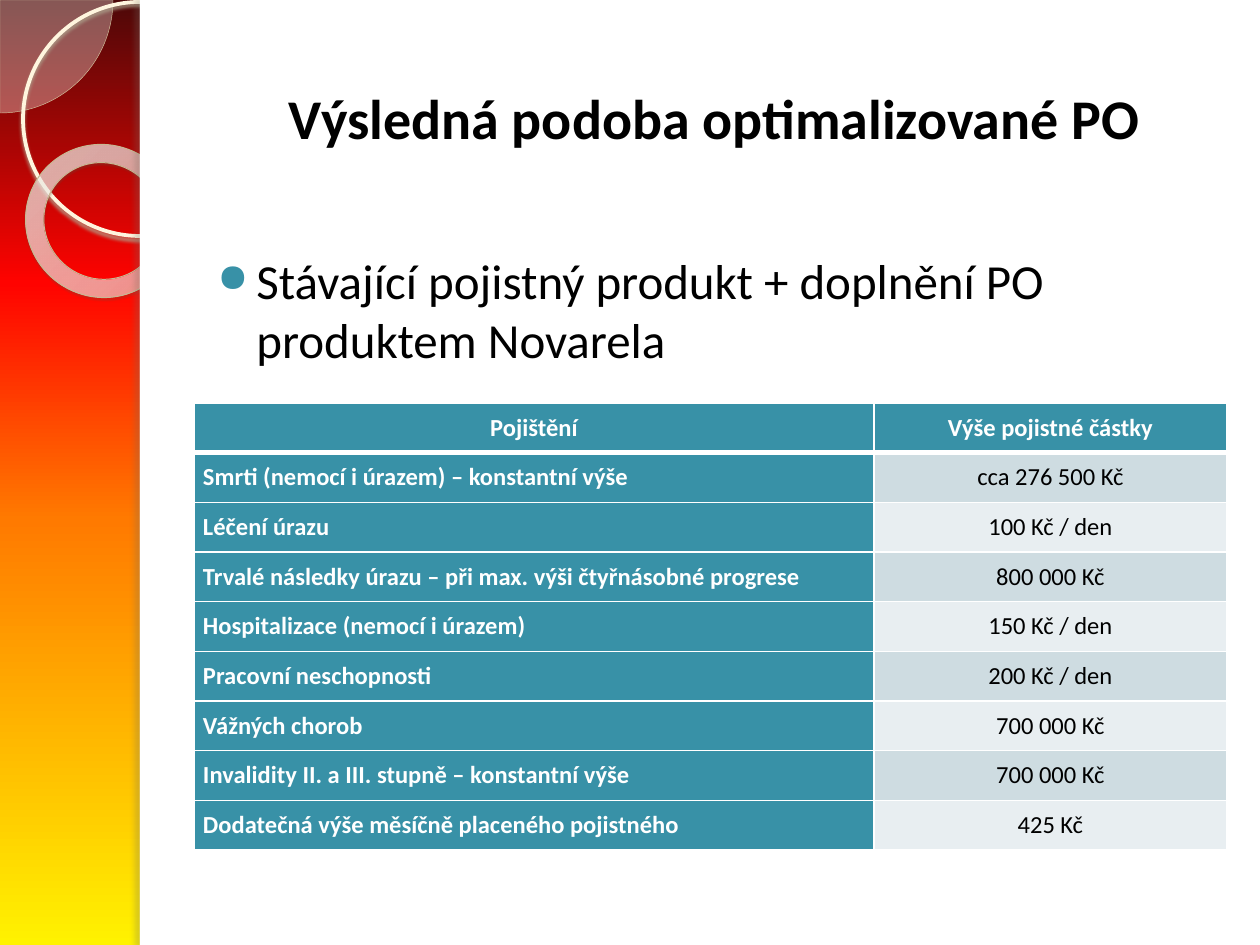
import pptx
import pptx.dml.color
import pptx.enum.shapes
import pptx.enum.text
import pptx.oxml
import pptx.oxml.ns
import pptx.util

SCALE = 914400 / 126
FONT = "Calibri"
COLORS = {
    "black": "000000", "white": "FFFFFF", "teal": "3891A7",
    "band_dark": "CEDCE1", "band_light": "E8EEF1",
    "cream": "FEFAF4", "sand": "D3C39F", "ring": "FFF5DE",
    "ring_shadow": "B0A68F", "donut_line": "C7B893",
    "donut_shadow": "5A5444", "edge_shadow": "736F63",
}
BACKGROUND_STOPS = [(0, "FFF200", 100), (45, "FF7A00", 100),
                    (70, "FF0300", 100), (100, "4D0808", 100)]
DONUT_STOPS = [(0, "FFFCF6", 70), (70, "FFFEFB", 55), (100, "F0D28E", 60)]
HEADER = ("Pojištění", "Výše pojistné částky")
COVERAGE = [
    ("Smrti (nemocí i úrazem) – konstantní výše", "cca 276 500 Kč"),
    ("Léčení úrazu", "100 Kč / den"),
    ("Trvalé následky úrazu – při max. výši čtyřnásobné progrese", "800 000 Kč"),
    ("Hospitalizace (nemocí i úrazem)", "150 Kč / den"),
    ("Pracovní neschopnosti", "200 Kč / den"),
    ("Vážných chorob", "700 000 Kč"),
    ("Invalidity II. a III. stupně – konstantní výše", "700 000 Kč"),
    ("Dodatečná výše měsíčně placeného pojistného", "425 Kč"),
]
SHAPE = pptx.enum.shapes.MSO_SHAPE
ALIGN = pptx.enum.text.PP_ALIGN
MIDDLE = pptx.enum.text.MSO_ANCHOR.MIDDLE


def px(length):
    return pptx.util.Emu(round(length * SCALE))


def rgb(name):
    return pptx.dml.color.RGBColor.from_string(COLORS[name])


def element(markup):
    """Parse one drawing element, adding the namespace to its first tag."""
    tag, rest = markup.split(" ", 1)
    return pptx.oxml.parse_xml(f"{tag} {pptx.oxml.ns.nsdecls('a')} {rest}")


def set_gradient(owner, stops, direction):
    """Replace the gradient found inside an element with the given stops."""
    gradient = next(owner.iter(pptx.oxml.ns.qn("a:gradFill")))
    marks = "".join(
        f'<a:gs pos="{position * 1000}"><a:srgbClr val="{color}">'
        f'<a:alpha val="{alpha * 1000}"/></a:srgbClr></a:gs>'
        for position, color, alpha in stops)
    gradient.getparent().replace(gradient, element(
        f'<a:gradFill rotWithShape="1"><a:gsLst>{marks}</a:gsLst>{direction}</a:gradFill>'))


def write_text(frame, text, size=14, color="black", bold=False, align=ALIGN.LEFT):
    paragraph = frame.paragraphs[0]
    paragraph.alignment = align
    run = paragraph.add_run()
    run.text = text
    run.font.name = FONT
    run.font.size = pptx.util.Pt(size)
    run.font.bold = bold
    run.font.color.rgb = rgb(color)
    return paragraph


class SlideBuilder:
    def __init__(self, slide):
        self.slide = slide

    def background(self, stops):
        self.slide.background.fill.gradient()
        set_gradient(self.slide.element, stops, '<a:lin ang="16200000" scaled="0"/>')

    def shape(self, kind, box, fill=None, alpha=100, line=None, shadow=None,
              adjustments=()):
        shape = self.slide.shapes.add_shape(kind, *map(px, box))
        for index, value in enumerate(adjustments):
            shape.adjustments[index] = value
        if fill:
            shape.fill.solid()
            shape.fill.fore_color.rgb = rgb(fill)
            color = next(shape.element.spPr.iter(pptx.oxml.ns.qn("a:srgbClr")))
            color.append(element(f'<a:alpha val="{alpha * 1000}"/>'))
        else:
            shape.fill.background()
        if line:
            shape.line.color.rgb = rgb(line[0])
            shape.line.width = pptx.util.Pt(line[1])
        else:
            shape.line.fill.background()
        shape.shadow.inherit = False
        if shadow:
            self.shadow(shape, *shadow)
        return shape

    def shadow(self, shape, color, alpha, blur, distance, angle):
        effects = shape.element.spPr.find(pptx.oxml.ns.qn("a:effectLst"))
        effects.append(element(
            f'<a:outerShdw blurRad="{pptx.util.Pt(blur)}" dist="{pptx.util.Pt(distance)}" '
            f'dir="{angle * 60000}" algn="tl" rotWithShape="0">'
            f'<a:srgbClr val="{COLORS[color]}"><a:alpha val="{alpha * 1000}"/>'
            '</a:srgbClr></a:outerShdw>'))

    def text(self, box, text, anchor=pptx.enum.text.MSO_ANCHOR.TOP, **style):
        frame = self.slide.shapes.add_textbox(*map(px, box)).text_frame
        frame.word_wrap = True
        frame.vertical_anchor = anchor
        return write_text(frame, text, **style)

    def bullet(self, box, text, **style):
        paragraph = self.text(box, text, **style)
        paragraph.space_before = pptx.util.Pt(6)
        properties = paragraph._p.get_or_add_pPr()
        properties.set("marL", str(px(50)))
        properties.set("indent", str(px(-39)))
        for markup in (f'<a:buClr ><a:srgbClr val="{COLORS["teal"]}"/></a:buClr>',
                       '<a:buSzPct val="80000"/>', '<a:buChar char="●"/>'):
            properties.append(element(markup))

    def table(self, box, widths, rows):
        table = self.slide.shapes.add_table(len(rows), len(widths), *map(px, box)).table
        for column, width in zip(table.columns, widths):
            column.width = px(width)
        for row_index, row in enumerate(rows):
            header = row_index == 0
            band = "band_dark" if row_index % 2 else "band_light"
            for column_index, text in enumerate(row):
                label = header or column_index == 0
                self.cell(
                    table.cell(row_index, column_index), text,
                    fill="teal" if label else band,
                    bottom=3 if header else 1,
                    top=3 if row_index == 1 else 1,
                    color="white" if label else "black", bold=label,
                    align=ALIGN.JUSTIFY if label and not header else ALIGN.CENTER)

    def cell(self, cell, text, fill, top, bottom, **style):
        cell.margin_left = cell.margin_right = px(9)
        cell.margin_top = cell.margin_bottom = 0
        cell.vertical_anchor = MIDDLE
        cell.fill.solid()
        cell.fill.fore_color.rgb = rgb(fill)
        borders = {"lnL": 1, "lnR": 1, "lnT": top, "lnB": bottom}
        properties = cell._tc.get_or_add_tcPr()
        for index, (side, width) in enumerate(borders.items()):
            properties.insert(index, element(
                f'<a:{side} w="{pptx.util.Pt(width)}"><a:solidFill>'
                f'<a:srgbClr val="{COLORS["white"]}"/></a:solidFill></a:{side}>'))
        write_text(cell.text_frame, text, **style)


def main():
    presentation = pptx.Presentation()
    presentation.slide_width, presentation.slide_height = px(1260), px(945)
    builder = SlideBuilder(presentation.slides.add_slide(presentation.slide_layouts[6]))

    builder.background(BACKGROUND_STOPS)
    builder.shape(SHAPE.PIE, (-113, -113, 226, 226), fill="cream", alpha=33,
                  line=("sand", 0.25), adjustments=(0, 54.02))
    builder.shape(SHAPE.OVAL, (23, 2, 234, 234), line=("ring", 2.15),
                  shadow=("ring_shadow", 85, 2, 2, 90))
    donut = builder.shape(SHAPE.DONUT, (25, 145, 155, 152), line=("donut_line", 0.58),
                          shadow=("donut_shadow", 35, 1, 1.2, 75), adjustments=(0.12,))
    donut.rotation = 38.6
    donut.fill.gradient()
    set_gradient(donut.element.spPr, DONUT_STOPS,
                 '<a:path path="circle"><a:fillToRect l="-408000" t="-50000" '
                 'r="508000" b="150000"/></a:path>')
    builder.shape(SHAPE.RECTANGLE, (140, 0, 1120, 945), fill="white")
    builder.shape(SHAPE.RECTANGLE, (140, 0, 10, 945), fill="white",
                  shadow=("edge_shadow", 25, 3, 3, 180))

    builder.text((198, 38, 1033, 158), "Výsledná podoba optimalizované PO",
                 anchor=MIDDLE, size=32, bold=True, align=ALIGN.CENTER)
    builder.table((194, 403, 1033, 447), (680, 353), [HEADER, *COVERAGE])
    builder.bullet((194, 244, 1002, 131),
                   "Stávající pojistný produkt + doplnění PO produktem Novarela", size=28)
    presentation.save("out.pptx")


if __name__ == "__main__":
    main()
